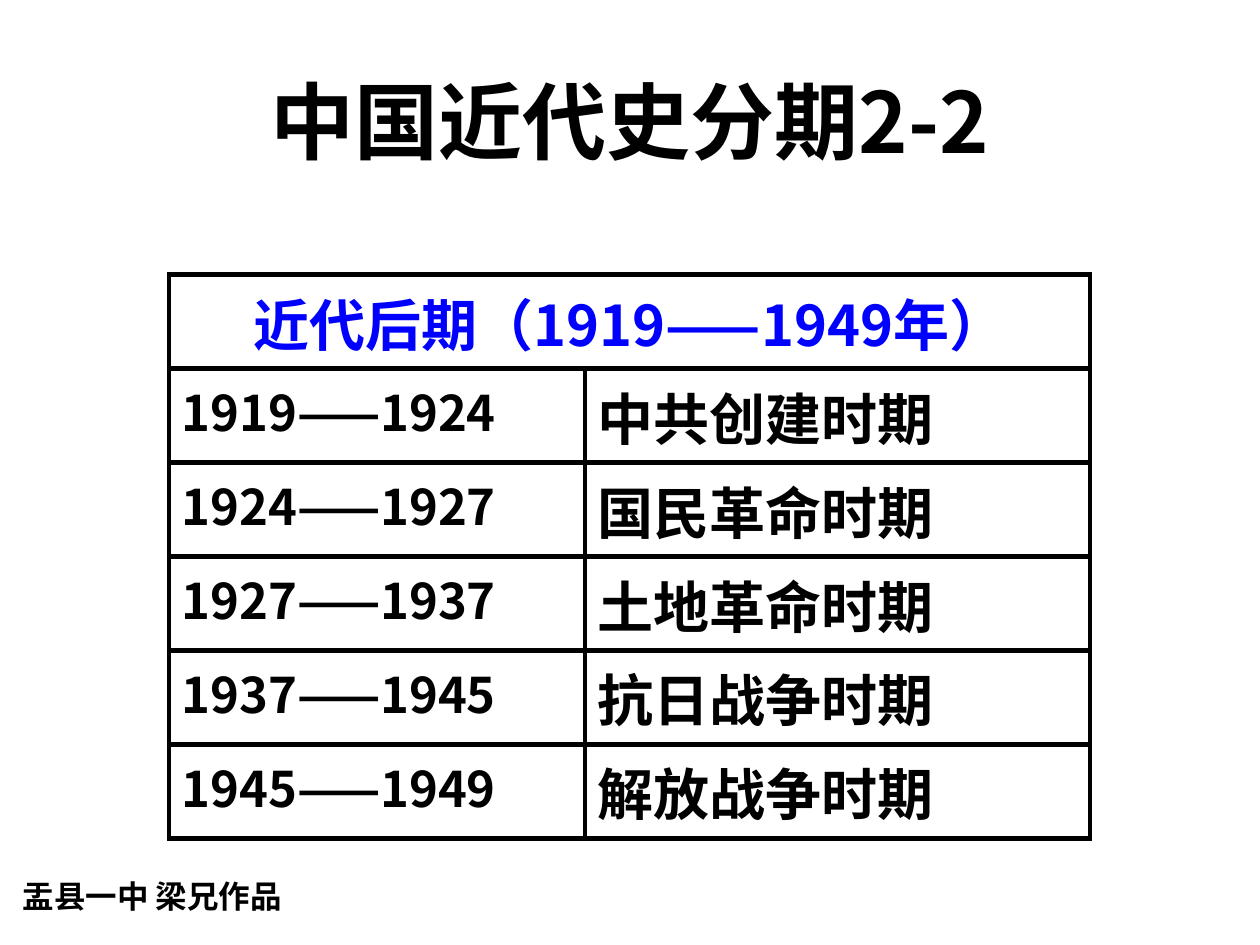
from pptx import Presentation
from pptx.dml.color import RGBColor
from pptx.enum.text import MSO_ANCHOR, PP_ALIGN
from pptx.oxml.ns import qn
from pptx.util import Pt
from lxml.etree import SubElement

COLORS = {"ink": "000000", "heading": "0000FF", "paper": "FFFFFF"}
TITLE_FONT = "Noto Sans CJK JP"
BODY_FONT = "Noto Sans CJK SC"

TITLE = "中国近代史分期2-2"
HEADING = "近代后期（1919——1949年）"
PERIODS = [
    ("1919——1924", "中共创建时期"),
    ("1924——1927", "国民革命时期"),
    ("1927——1937", "土地革命时期"),
    ("1937——1945", "抗日战争时期"),
    ("1945——1949", "解放战争时期"),
]
FOOTER = "盂县一中 梁兄作品"

TABLE_LEFT, TABLE_TOP = 96.6, 157
COLUMN_WIDTHS = (237.6, 288.7)
ROW_HEIGHT = 53.7
BORDER_WIDTH = 3


def write(frame, text, size, color="ink", font=BODY_FONT, align=PP_ALIGN.LEFT):
    para = frame.paragraphs[0]
    para.alignment = align
    span = para.add_run()
    span.text = text
    span.font.size = Pt(size)
    span.font.bold = True
    span.font.name = font
    span.font.color.rgb = RGBColor.from_string(COLORS[color])
    SubElement(span.font._element, qn("a:ea"), typeface=font)


def style_cell(cell):
    """Draw all four borders, then set the fill, which must follow them in the XML."""
    properties = cell._tc.get_or_add_tcPr()
    for side in ("lnL", "lnR", "lnT", "lnB"):
        line = SubElement(properties, qn(f"a:{side}"), w=str(Pt(BORDER_WIDTH)))
        fill = SubElement(line, qn("a:solidFill"))
        SubElement(fill, qn("a:srgbClr"), val=COLORS["ink"])
    cell.fill.background()


def add_periods_table(page):
    row_count = len(PERIODS) + 1
    table = page.shapes.add_table(
        row_count, len(COLUMN_WIDTHS), Pt(TABLE_LEFT), Pt(TABLE_TOP),
        Pt(sum(COLUMN_WIDTHS)), Pt(ROW_HEIGHT * row_count)).table
    table.first_row = table.horz_banding = False
    for column, width in zip(table.columns, COLUMN_WIDTHS):
        column.width = Pt(width)
    for row in table.rows:
        row.height = Pt(ROW_HEIGHT)
    for cell in table.iter_cells():
        style_cell(cell)

    table.cell(0, 0).merge(table.cell(0, 1))
    write(table.cell(0, 0).text_frame, HEADING, 32, "heading", align=PP_ALIGN.CENTER)
    for index, (years, period) in enumerate(PERIODS, start=1):
        write(table.cell(index, 0).text_frame, years, 28)
        write(table.cell(index, 1).text_frame, period, 32)


def main():
    deck = Presentation()
    deck.slide_width, deck.slide_height = Pt(720), Pt(540)
    page = deck.slides.add_slide(deck.slide_layouts[5])
    page.background.fill.solid()
    page.background.fill.fore_color.rgb = RGBColor.from_string(COLORS["paper"])

    title = page.shapes.title
    title.left, title.top, title.width, title.height = Pt(36), Pt(23.8), Pt(648), Pt(90)
    title.text_frame.vertical_anchor = MSO_ANCHOR.MIDDLE
    write(title.text_frame, TITLE, 48, font=TITLE_FONT, align=PP_ALIGN.CENTER)

    add_periods_table(page)

    footer = page.shapes.add_textbox(Pt(5.8), Pt(497.5), Pt(167.8), Pt(30.2))
    footer.text_frame.word_wrap = True
    write(footer.text_frame, FOOTER, 18)

    deck.save("out.pptx")


if __name__ == "__main__":
    main()
